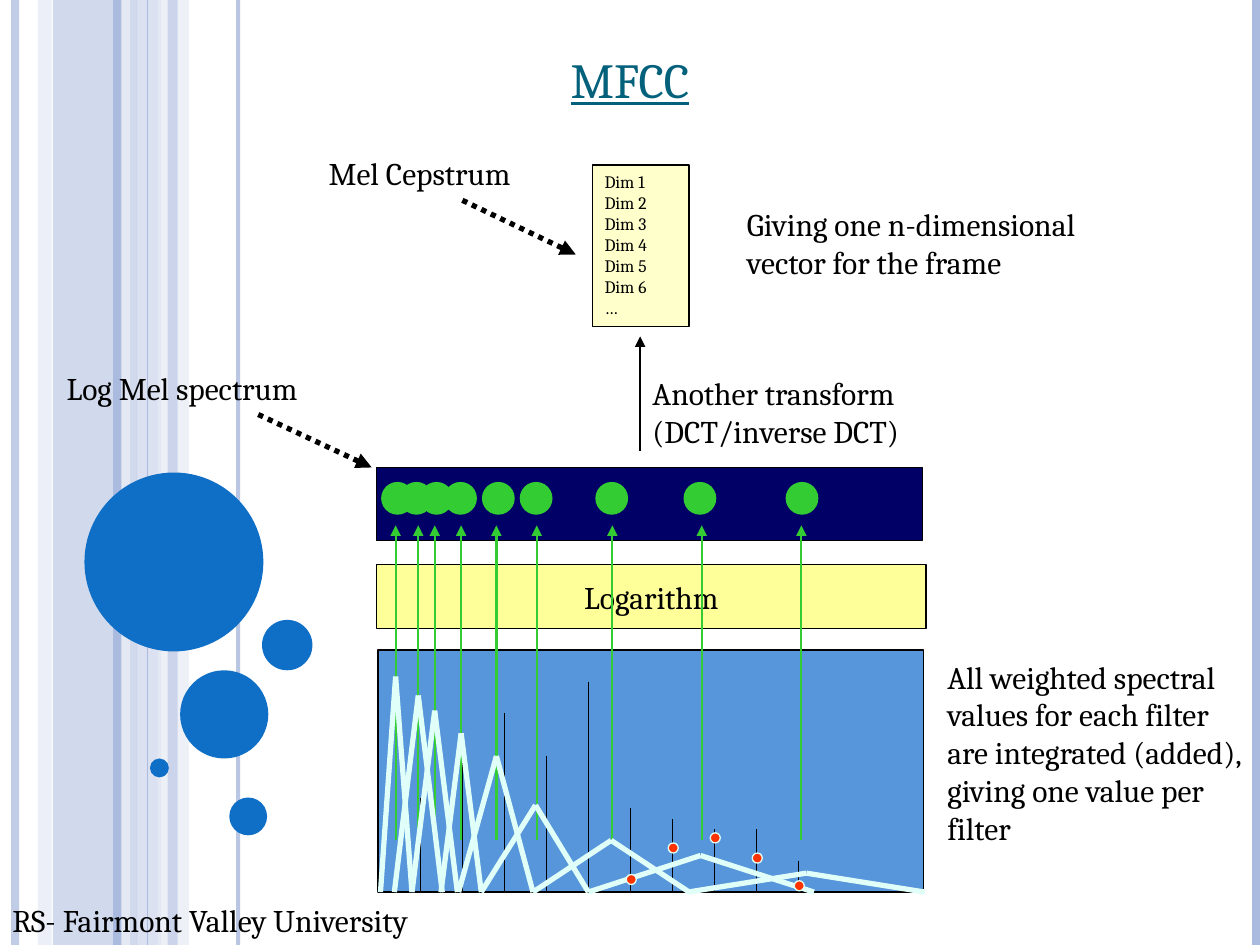
"""Build the MFCC slide: filter bank, logarithm, transform and cepstral vector."""
from lxml import etree
from pptx import Presentation
from pptx import util as u
from pptx.dml.color import RGBColor
from pptx.enum import dml, shapes, text
from pptx.oxml import ns

BLACK = RGBColor(0x00, 0x00, 0x00)
TITLE_TEAL = RGBColor(0x04, 0x61, 0x7B)
STRIPE = RGBColor(0xAB, 0xBB, 0xDF)
STRIPE_LIGHT = RGBColor(0xCC, 0xD5, 0xEA)
STRIPE_PALE = RGBColor(0xE7, 0xEB, 0xF5)
BUBBLE = RGBColor(0x0F, 0x6F, 0xC6)
CREAM = RGBColor(0xFF, 0xFF, 0xCC)
YELLOW = RGBColor(0xFF, 0xFF, 0x99)
NAVY = RGBColor(0x00, 0x00, 0x66)
SKY = RGBColor(0x57, 0x96, 0xDB)
GREEN = RGBColor(0x33, 0xCC, 0x33)
MINT = RGBColor(0xE1, 0xFF, 0xF9)
RED = RGBColor(0xFF, 0x33, 0x00)

RECTANGLE = shapes.MSO_SHAPE.RECTANGLE
OVAL = shapes.MSO_SHAPE.OVAL
FONT = "Cambria"
SLIDE_WIDTH, SLIDE_HEIGHT = 10, 7.5
BASELINE = 7.08
FILTER_ARROW_WIDTH = 1.25

BANDS = [(0.42, 0.67, STRIPE, 54), (0.3, 0.11, STRIPE_LIGHT, 36), (1.08, 0.2, STRIPE_LIGHT, 70),
         (1.25, 0.25, STRIPE_PALE, 71), (1.33, 0.08, STRIPE, 51)]
STRIPES = [(0.12, STRIPE, 4.5, 73), (1, STRIPE_PALE, 4.5, 83), (0.93, STRIPE, 4.5, 100),
           (1.89, STRIPE, 2.25, 82), (1.17, STRIPE, 0.75, 100), (9.97, STRIPE, 4.5, 100)]
BUBBLES = [(0.67, 3.75, 1.42), (1.43, 5.32, 0.7), (1.19, 6.02, 0.15), (1.82, 6.33, 0.3),
           (2.08, 4.92, 0.4)]

TITLE = "MFCC"
DIMENSIONS = "Dim 1\nDim 2\nDim 3\nDim 4\vDim 5\nDim 6\n…"
LABELS = [("Another transform (DCT/inverse DCT)", 5.08, 2.92, 2.58, 0.7),
          ("Giving one n-dimensional vector for the frame", 5.83, 1.58, 3.25, 0.7),
          ("Log Mel spectrum", 0.43, 2.88, 2.58, 0.4),
          ("Mel Cepstrum", 2.51, 1.17, 1.82, 0.4),
          ("All weighted spectral values for each filter are integrated (added), "
           "giving one value per filter", 7.42, 5.17, 2.58, 1.6),
          ("RS- Fairmont Valley University", 0, 7.1, 4.58, 0.4)]
POINTERS = [((2.05, 3.29), (2.95, 3.71)), ((3.67, 1.59), (4.57, 2.02))]

FILTER_OUTPUTS = [(3.03, 3.14), (3.18, 3.32), (3.34, 3.45), (3.53, 3.66), (3.83, 3.94),
                  (4.13, 4.26), (4.73, 4.86), (5.43, 5.57), (6.24, 6.36)]
SPECTRUM_TOPS = [6.33, 6, 5.66, 6, 5.41, 6.41, 6.5, 6.58, 6.58, 6.83]
FILTERS = [(3.02, 3.14, 5.37, 3.27), (3.13, 3.32, 5.52, 3.51), (3.27, 3.45, 5.64, 3.63),
           (3.5, 3.66, 5.82, 3.82), (3.64, 3.94, 6, 4.23), (3.82, 4.25, 6.39, 4.67),
           (4.23, 4.85, 6.67, 5.47), (4.67, 5.56, 6.79, 6.46), (5.46, 6.4, 6.93, 7.34)]
SAMPLE_TOPS = [6.94, 6.69, 6.61, 6.77, 6.99]


def set_opacity(fill, percent):
    if percent < 100:
        color = fill._xPr.find(".//" + ns.qn("a:srgbClr"))
        etree.SubElement(color, ns.qn("a:alpha"), val=str(percent * 1000))


def add_shape(parent, kind, left, top, width, height, color, outline=None, opacity=100):
    shape = parent.add_shape(kind, *map(u.Inches, (left, top, width, height)))
    shape.shadow.inherit = False
    shape.fill.solid()
    shape.fill.fore_color.rgb = color
    set_opacity(shape.fill, opacity)
    if outline is None:
        shape.line.fill.background()
    else:
        shape.line.color.rgb = outline
        shape.line.width = u.Pt(0.75)
    return shape


def add_line(parent, start, end, color, width=0.75, opacity=100, arrow=False, dotted=False):
    connector = parent.add_connector(shapes.MSO_CONNECTOR.STRAIGHT, *map(u.Inches, (*start, *end)))
    line = connector.line
    line.color.rgb = color
    line.width = u.Pt(width)
    set_opacity(line.fill, opacity)
    if dotted:
        line.dash_style = dml.MSO_LINE.ROUND_DOT
    if arrow:
        etree.SubElement(line._ln, ns.qn("a:tailEnd"), type="triangle")
    etree.SubElement(connector._element.spPr, ns.qn("a:effectLst"))


def write(shape, content, size=18, color=BLACK, align=text.PP_ALIGN.LEFT,
          anchor=text.MSO_ANCHOR.TOP, wrap=True, underline=None):
    frame = shape.text_frame
    frame.word_wrap = wrap
    frame.vertical_anchor = anchor
    frame.text = content
    for paragraph in frame.paragraphs:
        paragraph.alignment = align
        for run in paragraph.runs:
            run.font.name = FONT
            run.font.size = u.Pt(size)
            run.font.color.rgb = color
            run.font.underline = underline


def add_text(parent, content, left, top, width, height, **style):
    box = parent.add_textbox(*map(u.Inches, (left, top, width, height)))
    write(box, content, **style)


def draw_background(parent):
    for left, width, color, opacity in BANDS:
        add_shape(parent, RECTANGLE, left, 0, width, SLIDE_HEIGHT, color, opacity=opacity)
    for x, color, width, opacity in STRIPES:
        add_line(parent, (x, 0), (x, SLIDE_HEIGHT), color, width, opacity)
    for left, top, size in BUBBLES:
        add_shape(parent, OVAL, left, top, size, size, BUBBLE)


def draw_stages(parent):
    centered = {"align": text.PP_ALIGN.CENTER, "anchor": text.MSO_ANCHOR.MIDDLE}
    add_text(parent, TITLE, 0.75, 0.25, 8.5, 0.75, size=28, color=TITLE_TEAL,
             underline=True, **centered)
    add_line(parent, (5.08, 3.58), (5.08, 2.67), BLACK, arrow=True)
    vector = add_shape(parent, RECTANGLE, 4.7, 1.31, 0.77, 1.28, CREAM, BLACK)
    write(vector, DIMENSIONS, size=10)
    add_shape(parent, RECTANGLE, 2.99, 3.71, 4.33, 0.58, NAVY, BLACK)
    add_shape(parent, RECTANGLE, 3, 5.16, 4.33, 1.92, SKY, BLACK)
    logarithm = add_shape(parent, RECTANGLE, 2.99, 4.48, 4.36, 0.51, YELLOW, BLACK)
    write(logarithm, "Logarithm", wrap=False, **centered)


def draw_filter_bank(parent):
    for left, x in FILTER_OUTPUTS:
        add_shape(parent, OVAL, left, 3.83, 0.25, 0.25, GREEN, GREEN)
        add_line(parent, (x, 6.67), (x, 4.17), GREEN, FILTER_ARROW_WIDTH, arrow=True)
    spectrum = parent.add_group_shape().shapes
    for index, top in enumerate(SPECTRUM_TOPS):
        x = 3.34 + index / 3
        add_line(spectrum, (x, top), (x, BASELINE), BLACK)
    triangles = parent.add_group_shape().shapes
    for left, peak, top, right in FILTERS:
        for foot in (left, right):
            add_line(triangles, (foot, BASELINE), (peak, top), MINT, 3)
    for index, top in enumerate(SAMPLE_TOPS):
        add_shape(parent, OVAL, 4.97 + index / 3, top, 0.08, 0.08, RED, MINT)


def main():
    presentation = Presentation()
    presentation.slide_width = u.Inches(SLIDE_WIDTH)
    presentation.slide_height = u.Inches(SLIDE_HEIGHT)
    slide = presentation.slides.add_slide(presentation.slide_layouts[6])
    draw_background(slide.shapes)
    draw_stages(slide.shapes)
    draw_filter_bank(slide.shapes)
    for label in LABELS:
        add_text(slide.shapes, *label)
    for start, end in POINTERS:
        add_line(slide.shapes, start, end, BLACK, 3, arrow=True, dotted=True)
    presentation.save("out.pptx")


if __name__ == "__main__":
    main()
